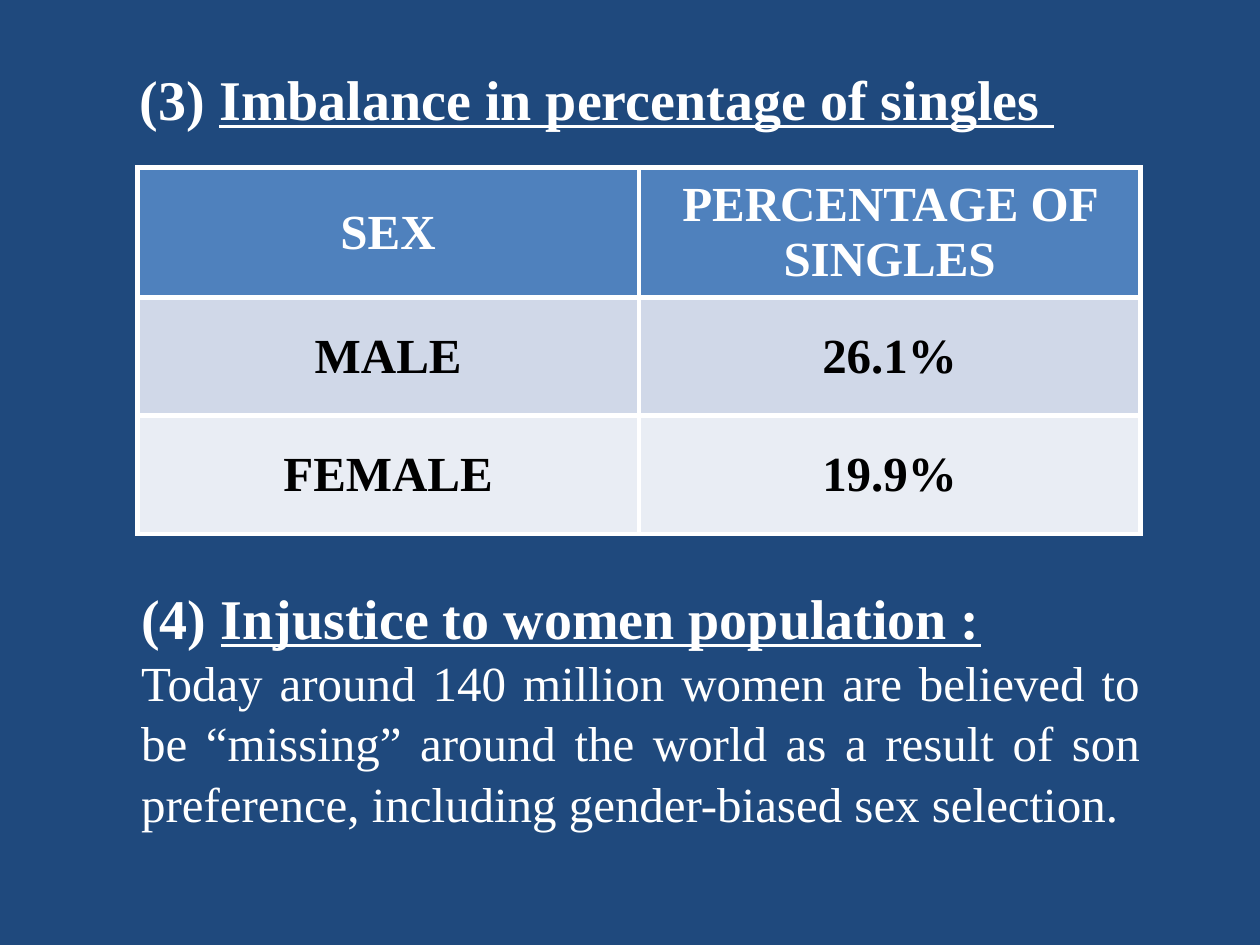
from lxml.etree import SubElement
from pptx import Presentation
from pptx.dml.color import RGBColor
from pptx.enum.text import MSO_ANCHOR, PP_ALIGN
from pptx.oxml.ns import qn
from pptx.util import Inches, Pt

FONT = "Times New Roman"
WHITE, BLACK, NAVY = "FFFFFF", "000000", "1F497D"
SINGLES = [("SEX", "PERCENTAGE OF SINGLES"), ("MALE", "26.1%"), ("FEMALE", "19.9%")]
ROW_STYLES = [("4F81BD", WHITE), ("D0D8E8", BLACK), ("E9EDF4", BLACK)]
ROW_HEIGHTS = [1.03, 0.94, 0.94]
COLUMN_WIDTH = 3.98


def color(value):
    """Turn a hex string into a colour."""
    return RGBColor.from_string(value)


def format_run(run, size, ink=WHITE, bold=True, underline=False):
    """Apply the slide's typeface to one run."""
    run.font.name = FONT
    run.font.size = Pt(size)
    run.font.color.rgb = color(ink)
    run.font.bold = bold
    run.font.underline = underline


def place(placeholder, left, top, width, height):
    """Move and size a placeholder in inches."""
    placeholder.left, placeholder.top = Inches(left), Inches(top)
    placeholder.width, placeholder.height = Inches(width), Inches(height)


def write_heading(paragraph, number, heading, alignment):
    """Write a plain number followed by an underlined heading."""
    paragraph.text = number
    format_run(paragraph.runs[0], 32)
    topic = paragraph.add_run()
    topic.text = heading
    format_run(topic, 32, underline=True)
    paragraph.alignment = alignment


def remove_bullet(paragraph):
    """Clear the list bullet and indent of a paragraph."""
    properties = paragraph._p.get_or_add_pPr()
    properties.set("marL", "0")
    properties.set("indent", "0")
    SubElement(properties, qn("a:buNone"))


def add_borders(cell, ink, width):
    """Draw a solid line on all four sides of a cell."""
    properties = cell._tc.get_or_add_tcPr()
    for position, side in enumerate(("a:lnL", "a:lnR", "a:lnT", "a:lnB")):
        border = properties.makeelement(qn(side), {"w": str(Pt(width))})
        fill = SubElement(border, qn("a:solidFill"))
        SubElement(fill, qn("a:srgbClr"), val=ink)
        properties.insert(position, border)


def fill_cell(cell, label, background, ink):
    """Write and style one table cell."""
    cell.text = label
    cell.vertical_anchor = MSO_ANCHOR.MIDDLE
    cell.fill.solid()
    cell.fill.fore_color.rgb = color(background)
    paragraph = cell.text_frame.paragraphs[0]
    paragraph.alignment = PP_ALIGN.CENTER
    format_run(paragraph.runs[0], 28, ink)
    add_borders(cell, WHITE, 3)


def add_singles_table(slide):
    """Add the table of singles by sex."""
    singles = slide.shapes.add_table(
        len(SINGLES), 2, Inches(1.09), Inches(1.33),
        Inches(2 * COLUMN_WIDTH), Inches(sum(ROW_HEIGHTS))).table
    for column in singles.columns:
        column.width = Inches(COLUMN_WIDTH)
    for index, (labels, style) in enumerate(zip(SINGLES, ROW_STYLES)):
        singles.rows[index].height = Inches(ROW_HEIGHTS[index])
        for cell, label in zip(singles.rows[index].cells, labels):
            fill_cell(cell, label, *style)


def write_title(title):
    """Set the heading above the table."""
    place(title, 0.78, 0, 8.77, 1.56)
    title.text_frame.margin_left = Inches(0.33)
    title.text_frame.vertical_anchor = MSO_ANCHOR.MIDDLE
    write_heading(title.text_frame.paragraphs[0], "(3) ",
                  "Imbalance in percentage of singles ", PP_ALIGN.LEFT)


def write_injustice(body):
    """Set the heading and statement below the table."""
    place(body, 1.02, 4.58, 8.13, 2.52)
    heading = body.text_frame.paragraphs[0]
    write_heading(heading, "(4) ", "Injustice to women population :", PP_ALIGN.JUSTIFY)
    statement = body.text_frame.add_paragraph()
    statement.text = ("Today around 140 million women are believed to be “missing” "
                      "around the world as a result of son preference, including "
                      "gender-biased sex selection.")
    statement.alignment = PP_ALIGN.JUSTIFY
    statement.line_spacing = 1.03
    format_run(statement.runs[0], 28, bold=False)
    for paragraph in (heading, statement):
        paragraph.space_before = Pt(0)
        remove_bullet(paragraph)


def main():
    """Build and save the slide."""
    presentation = Presentation()
    presentation.slide_width, presentation.slide_height = Inches(10), Inches(7.5)
    slide = presentation.slides.add_slide(presentation.slide_layouts[1])
    slide.background.fill.solid()
    slide.background.fill.fore_color.rgb = color(NAVY)
    write_title(slide.shapes.title)
    add_singles_table(slide)
    write_injustice(slide.placeholders[1])
    presentation.save("out.pptx")


if __name__ == "__main__":
    main()
